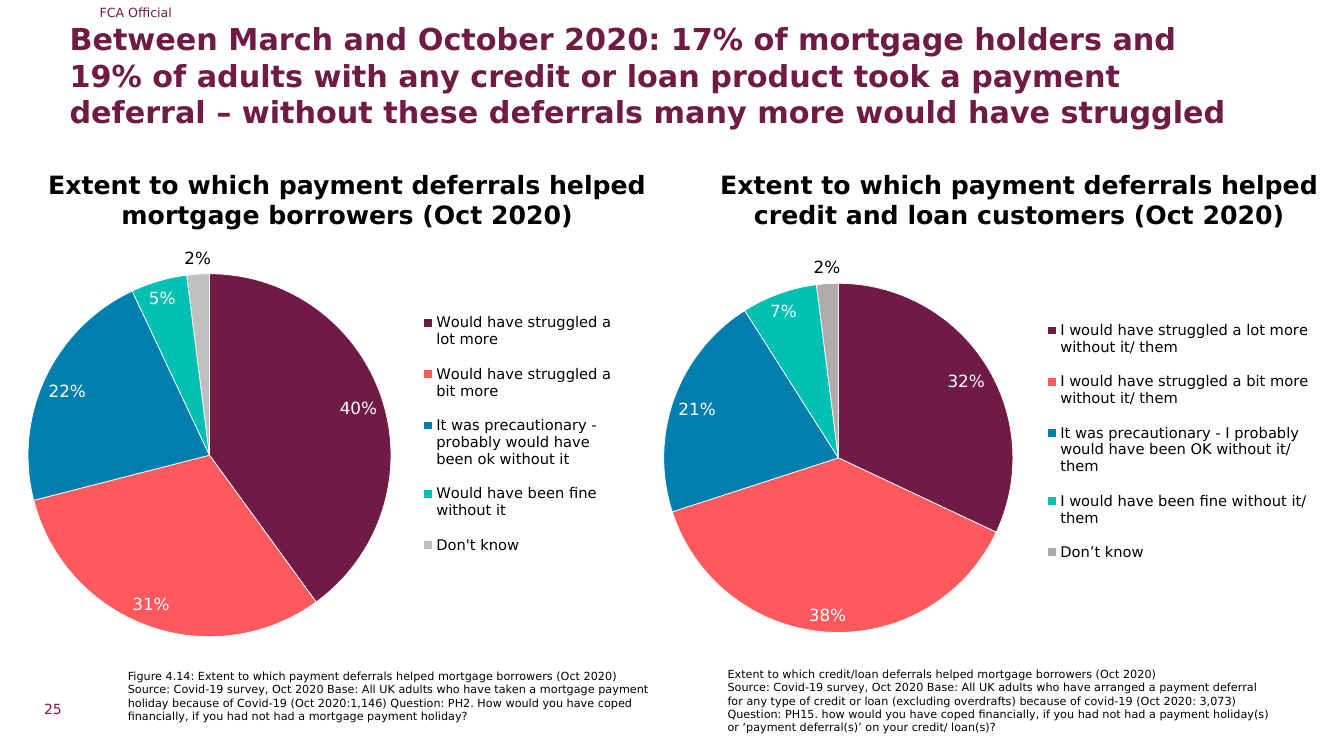
from lxml import etree
from pptx import Presentation
from pptx.chart.data import CategoryChartData
from pptx.dml.color import RGBColor
from pptx.enum.chart import XL_CHART_TYPE, XL_LABEL_POSITION, XL_LEGEND_POSITION
from pptx.enum.text import MSO_ANCHOR, PP_ALIGN
from pptx.oxml.ns import qn
from pptx.util import Pt

PIE = XL_CHART_TYPE.PIE
BEST_FIT = XL_LABEL_POSITION.BEST_FIT
OUTSIDE_END = XL_LABEL_POSITION.OUTSIDE_END
LEGEND_RIGHT = XL_LEGEND_POSITION.RIGHT
TOP, MIDDLE = MSO_ANCHOR.TOP, MSO_ANCHOR.MIDDLE
LEFT, CENTER = PP_ALIGN.LEFT, PP_ALIGN.CENTER

FONT = "DejaVu Sans"
COLORS = {
    "plum": "701B45", "coral": "FF585D", "blue": "007FAE", "teal": "00BFB3",
    "silver": "BFBFBF", "grey": "AFABAB", "crimson": "8E1537",
    "black": "000000", "white": "FFFFFF",
}

MARKING = "FCA Official"
TITLE = ("Between March and October 2020: 17% of mortgage holders and 19% of adults "
         "with any credit or loan product took a payment deferral – without these "
         "deferrals many more would have struggled")
PAGE = "25"

PANELS = [
    {
        "heading": "Extent to which payment deferrals helped mortgage borrowers (Oct 2020)",
        "heading_box": (8, 117.4, 480, 51),
        "chart_box": (2.2, 167, 442.8, 298),
        "pie_layout": (0.04, 0.096, 0.586, 0.87),
        "legend_layout": (0.67, 0.15, 0.32, 0.66),
        "answers": [
            ("Would have struggled a lot more", 0.40, "plum"),
            ("Would have struggled a bit more", 0.31, "coral"),
            ("It was precautionary - probably would have been ok without it", 0.22, "blue"),
            ("Would have been fine without it", 0.05, "teal"),
            ("Don't know", 0.02, "silver"),
        ],
        "note_box": (84.2, 474.5, 402.5, 46),
        "note": [
            "Figure 4.14: Extent to which payment deferrals helped mortgage borrowers (Oct 2020)",
            "Source: Covid‑19 survey, Oct 2020 Base: All UK adults who have taken a mortgage "
            "payment holiday because of Covid‑19 (Oct 2020:1,146) Question: PH2. How would you "
            "have coped financially, if you had not had a mortgage payment holiday?",
        ],
    },
    {
        "heading": "Extent to which payment deferrals helped credit and loan customers (Oct 2020)",
        "heading_box": (488, 117.4, 480, 51),
        "chart_box": (455, 174.2, 486.7, 288),
        "pie_layout": (0.039, 0.098, 0.513, 0.866),
        "legend_layout": (0.597, 0.15, 0.395, 0.68),
        "answers": [
            ("I would have struggled a lot more without it/ them", 0.32, "plum"),
            ("I would have struggled a bit more without it/ them", 0.38, "coral"),
            ("It was precautionary - I probably would have been OK without it/ them", 0.21, "blue"),
            ("I would have been fine without it/ them", 0.07, "teal"),
            ("Don’t know", 0.02, "grey"),
        ],
        "note_box": (512.6, 473, 402.5, 55.4),
        "note": [
            "Extent to which credit/loan deferrals helped mortgage borrowers (Oct 2020)",
            "Source: Covid‑19 survey, Oct 2020 Base: All UK adults who have arranged a payment "
            "deferral for any type of credit or loan (excluding overdrafts) because of covid-19 "
            "(Oct 2020: 3,073) Question: PH15. how would you have coped financially, if you had "
            "not had a payment holiday(s) or ‘payment deferral(s)’ on your credit/ loan(s)?",
        ],
    },
]


def rgb(name):
    return RGBColor.from_string(COLORS[name])


def style(font, size, color, bold=False):
    font.name, font.size, font.bold = FONT, Pt(size), bold
    font.color.rgb = rgb(color)


def add_text(s, box, lines, size, color, bold=False, align=LEFT, anchor=TOP, inset=None):
    tf = s.shapes.add_textbox(*map(Pt, box)).text_frame
    tf.word_wrap = True
    tf.vertical_anchor = anchor
    if inset is not None:
        tf.margin_left = tf.margin_top = tf.margin_right = tf.margin_bottom = Pt(inset)
    tf.text = "\n".join(lines)
    for p in tf.paragraphs:
        p.alignment = align
        for r in p.runs:
            style(r.font, size, color, bold)


def set_layout(parent, index, fractions, inner=False):
    for old in parent.findall(qn("c:layout")):
        parent.remove(old)
    layout = etree.Element(qn("c:layout"))
    manual = etree.SubElement(layout, qn("c:manualLayout"))
    settings = [("layoutTarget", "inner")] if inner else []
    settings += [("xMode", "edge"), ("yMode", "edge")]
    settings += zip("xywh", fractions)
    for tag, value in settings:
        etree.SubElement(manual, qn(f"c:{tag}")).set("val", str(value))
    parent.insert(index, layout)


def add_pie(s, panel):
    names, values, fills = zip(*panel["answers"])
    data = CategoryChartData(number_format="0%")
    data.categories = names
    data.add_series("Series 1", values)
    chart = s.shapes.add_chart(PIE, *map(Pt, panel["chart_box"]), data).chart
    chart.has_title = False
    style(chart.font, 10.5, "black")
    chart.has_legend = True
    chart.legend.position = LEGEND_RIGHT
    chart.legend.include_in_layout = False
    style(chart.legend.font, 10.5, "black")

    plot = chart.plots[0]
    plot.vary_by_categories = True
    series = plot.series[0]
    for i, fill in enumerate(fills):
        fmt = series.points[i].format
        fmt.fill.solid()
        fmt.fill.fore_color.rgb = rgb(fill)
        fmt.line.color.rgb = rgb("white")
        fmt.line.width = Pt(0.5)
    labels = series.data_labels
    labels.show_value = True
    labels.show_percentage = False
    labels.number_format = "0%"
    labels.number_format_is_linked = False
    labels.position = BEST_FIT
    style(labels.font, 12, "white")
    dont_know = series.points[len(fills) - 1].data_label
    style(dont_know.font, 12, "black")
    dont_know.position = OUTSIDE_END

    set_layout(chart.element.find(".//" + qn("c:plotArea")), 0, panel["pie_layout"], True)
    set_layout(chart.element.find(".//" + qn("c:legend")), 1, panel["legend_layout"])


prs = Presentation()
prs.slide_width, prs.slide_height = Pt(960), Pt(540)
s = prs.slides.add_slide(prs.slide_layouts[6])

add_text(s, (64, 0, 317.5, 18), [MARKING], 9, "plum")
add_text(s, (49.7, 9.4, 849.6, 88.6), [TITLE], 21.6, "plum", bold=True, anchor=MIDDLE, inset=0)
add_text(s, (0, 496, 75.6, 21), [PAGE], 10, "crimson", align=CENTER, anchor=MIDDLE)
for panel in PANELS:
    add_text(s, panel["heading_box"], [panel["heading"]], 18, "black", bold=True, align=CENTER)
    add_pie(s, panel)
    add_text(s, panel["note_box"], panel["note"], 8, "black")

prs.save("out.pptx")
